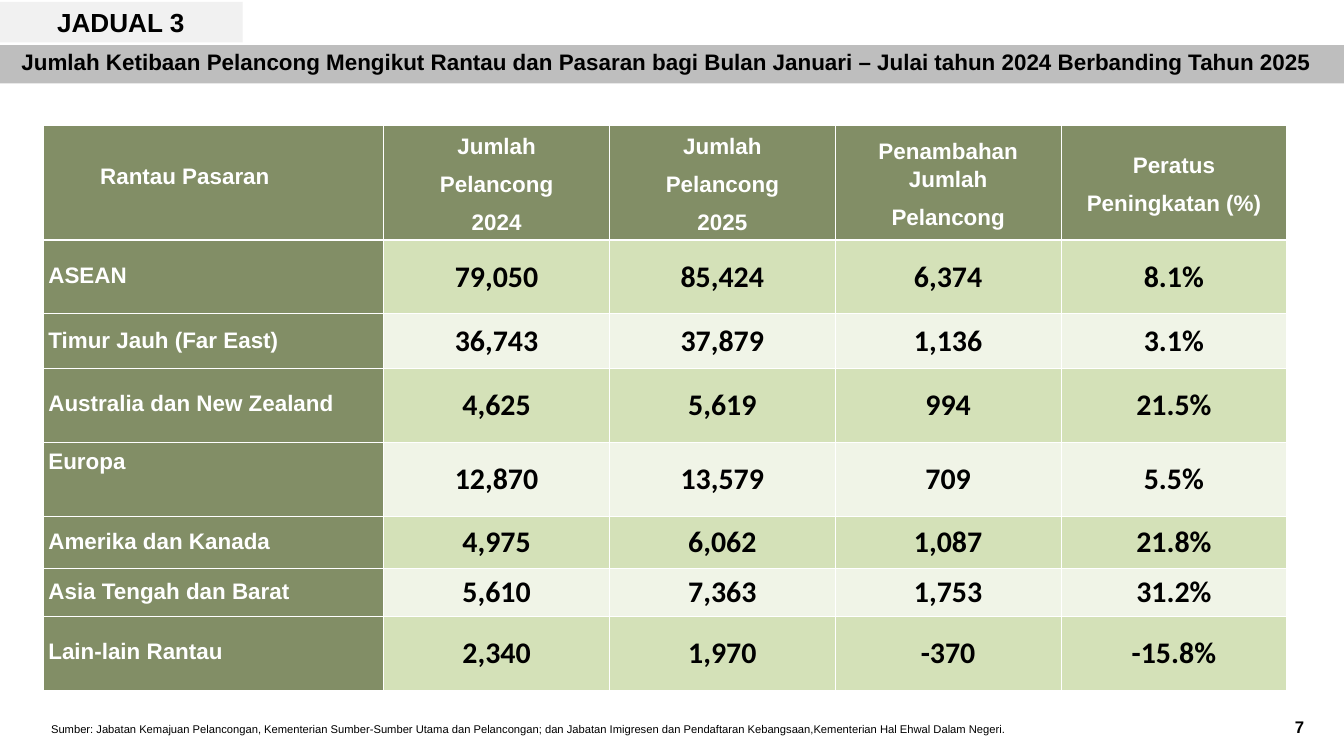
from lxml import etree
from pptx import Presentation
from pptx.dml.color import RGBColor
from pptx.enum.shapes import MSO_SHAPE
from pptx.enum.text import MSO_ANCHOR, MSO_AUTO_SIZE, PP_ALIGN
from pptx.oxml.ns import qn
from pptx.util import Pt

PX = 9144
RECT = MSO_SHAPE.RECTANGLE
TOP, MIDDLE = MSO_ANCHOR.TOP, MSO_ANCHOR.MIDDLE
LEFT, CENTER = PP_ALIGN.LEFT, PP_ALIGN.CENTER
FIT_SHAPE = MSO_AUTO_SIZE.SHAPE_TO_FIT_TEXT

BLACK = RGBColor(0x00, 0x00, 0x00)
WHITE = RGBColor(0xFF, 0xFF, 0xFF)
OLIVE = RGBColor(0x4F, 0x61, 0x28)
GREEN = RGBColor(0xC3, 0xD5, 0x9B)
PALE = RGBColor(0xEB, 0xF0, 0xDE)
GREY = RGBColor(0xBE, 0xBE, 0xBE)
LIGHT_GREY = RGBColor(0xF1, 0xF1, 0xF1)

COLUMNS = [506, 336, 336, 336, 336]
HEADER_HEIGHT = 158
HEADERS = [
    (["Rantau Pasaran"], LEFT, TOP, (84, 58, 0, 0)),
    (["Jumlah", "Pelancong", "2024"], CENTER, TOP, (7, 7, 7, 7)),
    (["Jumlah", "Pelancong", "2025"], CENTER, MIDDLE, (7, 0, 7, 0)),
    (["Penambahan Jumlah", "Pelancong"], CENTER, MIDDLE, (7, 0, 7, 0)),
    (["Peratus", "Peningkatan (%)"], CENTER, MIDDLE, (7, 0, 7, 0)),
]
REGIONS = [
    ("ASEAN", 110, 35, ["79,050", "85,424", "6,374", "8.1%"]),
    ("Timur Jauh (Far East)", 81, 21, ["36,743", "37,879", "1,136", "3.1%"]),
    ("Australia dan New Zealand", 110, 35, ["4,625", "5,619", "994", "21.5%"]),
    ("Europa", 110, 11, ["12,870", "13,579", "709", "5.5%"]),
    ("Amerika dan Kanada", 78, 19, ["4,975", "6,062", "1,087", "21.8%"]),
    ("Asia Tengah dan Barat", 71, 16, ["5,610", "7,363", "1,753", "31.2%"]),
    ("Lain-lain Rantau", 110, 35, ["2,340", "1,970", "-370", "-15.8%"]),
]


def px(*values):
    """Turn px lengths into EMU."""
    return [v * PX for v in values]


def add_run(p, text, size, color, bold=True, font="Arial"):
    """Add one formatted run to a paragraph."""
    r = p.add_run()
    r.text = text
    r.font.size = Pt(size)
    r.font.name = font
    r.font.bold = bold
    r.font.color.rgb = color


def add_bar(slide, box, color):
    """Draw a plain filled band."""
    sp = slide.shapes.add_shape(RECT, *px(*box))
    sp.shadow.inherit = False
    sp.fill.solid()
    sp.fill.fore_color.rgb = color
    sp.line.fill.background()


def set_text(sp, text, size, bold=True, align=LEFT):
    """Fill a text shape with one line in black."""
    tf = sp.text_frame
    tf.word_wrap = True
    tf.auto_size = FIT_SHAPE
    tf.vertical_anchor = TOP
    tf.margin_left, tf.margin_top, tf.margin_right, tf.margin_bottom = px(1, 1, 0, 0)
    p = tf.paragraphs[0]
    p.alignment = align
    add_run(p, text, size, BLACK, bold)


def add_label(slide, box, text, size, bold=True, align=LEFT):
    """Add a one-line text box."""
    set_text(slide.shapes.add_textbox(*px(*box)), text, size, bold, align)


def style_cell(cell, fill, anchor, margins, top=1, bottom=1):
    """Set a cell's borders, translucent fill, anchor and margins."""
    tcPr = cell._tc.get_or_add_tcPr()
    for side, width in (("L", 1), ("R", 1), ("T", top), ("B", bottom)):
        ln = etree.SubElement(tcPr, qn(f"a:ln{side}"), w=str(Pt(width)))
        solid = etree.SubElement(ln, qn("a:solidFill"))
        etree.SubElement(solid, qn("a:srgbClr"), val=str(WHITE))
    cell.fill.solid()
    cell.fill.fore_color.rgb = fill
    clr = tcPr.find(qn("a:solidFill")).find(qn("a:srgbClr"))
    etree.SubElement(clr, qn("a:alpha"), val="71000")
    cell.vertical_anchor = anchor
    cell.margin_left, cell.margin_top, cell.margin_right, cell.margin_bottom = px(*margins)


def fill_header(table):
    """Write the header row."""
    for col, (lines, align, anchor, margins) in enumerate(HEADERS):
        cell = table.cell(0, col)
        style_cell(cell, OLIVE, anchor, margins, bottom=3)
        tf = cell.text_frame
        for i, line in enumerate(lines):
            p = tf.add_paragraph() if i else tf.paragraphs[0]
            p.alignment = align
            if align == CENTER:
                p.line_spacing = 1.15
            if i:
                p.space_before = Pt(10)
            add_run(p, line, 24, WHITE)


def fill_region(table, row, name, inset, values):
    """Write one region's name and figures."""
    top = 3 if row == 1 else 1
    cell = table.cell(row, 0)
    style_cell(cell, OLIVE, TOP, (7, inset, 0, 0), top=top)
    add_run(cell.text_frame.paragraphs[0], name, 24, WHITE)
    for col, value in enumerate(values, 1):
        cell = table.cell(row, col)
        style_cell(cell, GREEN if row % 2 else PALE, MIDDLE, (0, 0, 0, 0), top=top)
        p = cell.text_frame.paragraphs[0]
        p.alignment = CENTER
        add_run(p, value, 32, BLACK, font="Calibri")


def add_arrivals(slide, left, top):
    """Build the table of arrivals by region."""
    heights = [HEADER_HEIGHT] + [region[1] for region in REGIONS]
    box = px(left, top, sum(COLUMNS), sum(heights))
    table = slide.shapes.add_table(len(heights), len(COLUMNS), *box).table
    table.first_row = table.horz_banding = False
    for column, width in zip(table.columns, COLUMNS):
        column.width = width * PX
    for row, height in zip(table.rows, heights):
        row.height = height * PX
    fill_header(table)
    for row, (name, _, inset, values) in enumerate(REGIONS, 1):
        fill_region(table, row, name, inset, values)


def add_heading(slide, left, top, width):
    """Place the title tab and the subtitle band."""
    add_bar(slide, (left, top + 64, width, 57), GREY)
    add_label(slide, (left - 21, top + 68, width + 23, 42),
              "Jumlah Ketibaan Pelancong Mengikut Rantau dan Pasaran bagi Bulan "
              "Januari – Julai tahun 2024 Berbanding Tahun 2025", 24, align=CENTER)
    add_bar(slide, (left, top, 361, 60), LIGHT_GREY)
    title = slide.shapes.title
    title.left, title.top, title.width, title.height = px(left + 84, top + 5, 192, 49)
    set_text(title, "JADUAL 3", 28)
    slide.shapes._spTree.append(title._element)


def add_footer(slide, left, top):
    """Place the source line and the page number."""
    add_label(slide, (left, top + 8, 1425, 23),
              "Sumber: Jabatan Kemajuan Pelancongan, Kementerian Sumber-Sumber Utama dan "
              "Pelancongan; dan Jabatan Imigresen dan Pendaftaran Kebangsaan,Kementerian "
              "Hal Ehwal Dalam Negeri.", 12, bold=False)
    add_label(slide, (left + 1851, top, 17, 33), "7", 18)


def main():
    """Build and save the slide."""
    prs = Presentation()
    prs.slide_width, prs.slide_height = px(2000, 1125)
    slide = prs.slides.add_slide(prs.slide_layouts[5])
    add_arrivals(slide, 65, 187)
    add_heading(slide, 0, 3, 2000)
    add_footer(slide, 75, 1066)
    prs.save("out.pptx")


if __name__ == "__main__":
    main()
